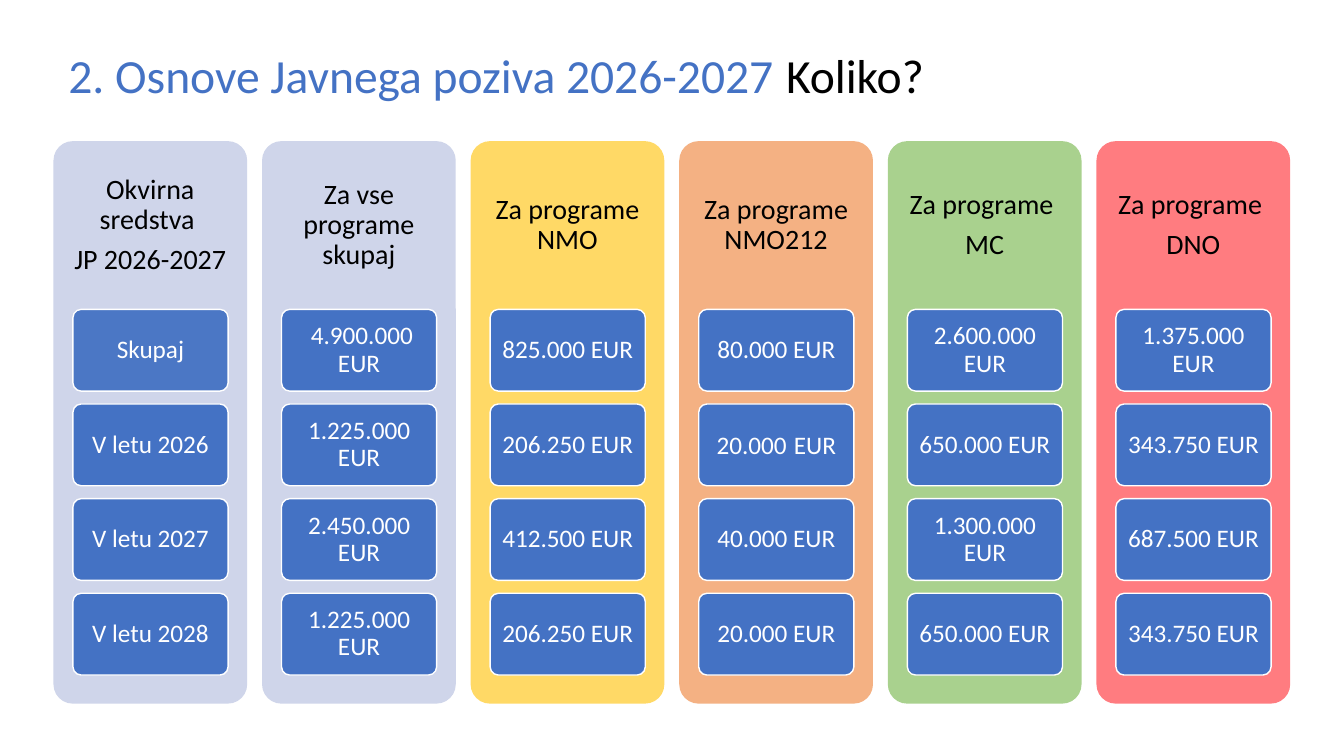
from lxml.etree import SubElement
from pptx import Presentation
from pptx.dml.color import RGBColor
from pptx.enum.shapes import MSO_SHAPE as Preset
from pptx.enum.text import MSO_ANCHOR as Anchor, PP_ALIGN as Align
from pptx.oxml.ns import qn
from pptx.util import Pt

BLUE, WHITE, BLACK = "4472C4", "FFFFFF", "000000"
LEFT, TOP, PITCH, WIDTH, HEIGHT = 38.2, 100.8, 149, 138.4, 401.8
HEADER_HEIGHT = 120.2
CARD_INSET, CARD_TOP, CARD_PITCH = 13.9, 221, 67.6
CARD_WIDTH, CARD_HEIGHT = 110.8, 58.4

PROGRAMMES = [
    ("CFD5EA", ["Okvirna sredstva ", "JP 2026-2027"],
     ["Skupaj", "V letu 2026", "V letu 2027", "V letu 2028"]),
    ("CFD5EA", ["Za vse programe skupaj"],
     [" 4.900.000 EUR", "1.225.000 EUR", "2.450.000 EUR", "1.225.000 EUR"]),
    ("FFD966", ["Za programe NMO"],
     ["825.000 EUR", "206.250 EUR", "412.500 EUR", "206.250 EUR"]),
    ("F4B183", ["Za programe NMO212"],
     ["80.000 EUR", [("20.000", 18), (" ", 22), ("EUR", 18)], "40.000 EUR", "20.000 EUR"]),
    ("A9D18E", ["Za programe ", "MC"],
     ["2.600.000 EUR", "650.000 EUR", "1.300.000 EUR", "650.000 EUR"]),
    ("FF7C80", ["Za programe ", "DNO"],
     ["1.375.000 EUR", "343.750 EUR", "687.500 EUR", "343.750 EUR"]),
]


def rgb(value):
    """Turn a hex string into a colour."""
    return RGBColor.from_string(value)


def assign(target, values):
    """Set every attribute named in the dict."""
    for name, value in values.items():
        setattr(target, name, value)


class FundingSlide:
    """Hold the style and the slide that the parts are drawn on."""

    font = "Calibri"
    centred = {"alignment": Align.CENTER, "line_spacing": 0.9}

    def __init__(self, slide):
        """Keep the slide to draw on."""
        self.slide = slide

    def set_text(self, frame, paragraphs, size, colour, margins, frame_format, paragraph_format):
        """Fill a text frame with paragraphs of plain text or sized spans."""
        horizontal, vertical = map(Pt, margins)
        assign(frame, {"margin_left": horizontal, "margin_right": horizontal,
                       "margin_top": vertical, "margin_bottom": vertical, **frame_format})
        for index, content in enumerate(paragraphs):
            paragraph = frame.add_paragraph() if index else frame.paragraphs[0]
            assign(paragraph, paragraph_format)
            if index:
                paragraph.space_before = Pt(7)
            spans = [(content, size)] if isinstance(content, str) else content
            for words, span_size in spans:
                run = paragraph.add_run()
                run.text = words
                assign(run.font, {"name": self.font, "size": Pt(span_size)})
                run.font.color.rgb = rgb(colour)

    def title(self, words, left, width, colour):
        """Place one part of the title line."""
        box = self.slide.shapes.add_textbox(Pt(left), Pt(29.5), Pt(width), Pt(48.2))
        self.set_text(box.text_frame, [words], 34, colour, (7.2, 3.6), {"word_wrap": False}, {})

    def header(self, paragraphs, left):
        """Place the heading of a programme column."""
        box = self.slide.shapes.add_textbox(Pt(left), Pt(TOP), Pt(WIDTH), Pt(HEADER_HEIGHT))
        self.set_text(box.text_frame, paragraphs, 20, BLACK, (6, 6),
                      {"word_wrap": True, "vertical_anchor": Anchor.MIDDLE}, self.centred)

    def panel(self, left, top, width, height, fill, line=None):
        """Draw a rounded panel, outlined when a line colour is given."""
        shape = self.slide.shapes.add_shape(
            Preset.ROUNDED_RECTANGLE, Pt(left), Pt(top), Pt(width), Pt(height))
        shape.adjustments[0] = 0.1
        shape.shadow.inherit = False
        shape.fill.solid()
        shape.fill.fore_color.rgb = rgb(fill)
        if line:
            shape.line.color.rgb = rgb(line)
            shape.line.width = Pt(1)
        else:
            shape.line.fill.background()
        return shape

    def card(self, content, left, top, opacity):
        """Draw an amount card with the given opacity in percent."""
        shape = self.panel(left, top, CARD_WIDTH, CARD_HEIGHT, BLUE, WHITE)
        self.set_text(shape.text_frame, [content], 18, WHITE, (3.6, 2.9),
                      {"word_wrap": True, "vertical_anchor": Anchor.MIDDLE}, self.centred)
        if opacity < 100:
            tint = shape.element.spPr.find(qn("a:solidFill"))[0]
            SubElement(tint, qn("a:alpha"), val=str(opacity * 1000))

    def column(self, left, fill, heading, amounts, first_opacity):
        """Draw a programme column with its heading and cards."""
        self.panel(left, TOP, WIDTH, HEIGHT, fill)
        self.header(heading, left)
        for row, amount in enumerate(amounts):
            self.card(amount, left + CARD_INSET, CARD_TOP + row * CARD_PITCH,
                      100 if row else first_opacity)


def main():
    """Build the funding overview and save it."""
    deck = Presentation()
    assign(deck, {"slide_width": Pt(960), "slide_height": Pt(540)})
    funding = FundingSlide(deck.slides.add_slide(deck.slide_layouts[6]))
    funding.title("2. Osnove Javnega poziva 2026-2027", 41.8, 523.4, BLUE)
    funding.title("Koliko?", 554.4, 113.8, BLACK)
    for index, (fill, heading, amounts) in enumerate(PROGRAMMES):
        funding.column(LEFT + index * PITCH, fill, heading, amounts, 100 if index else 95)
    deck.save("out.pptx")


if __name__ == "__main__":
    main()
